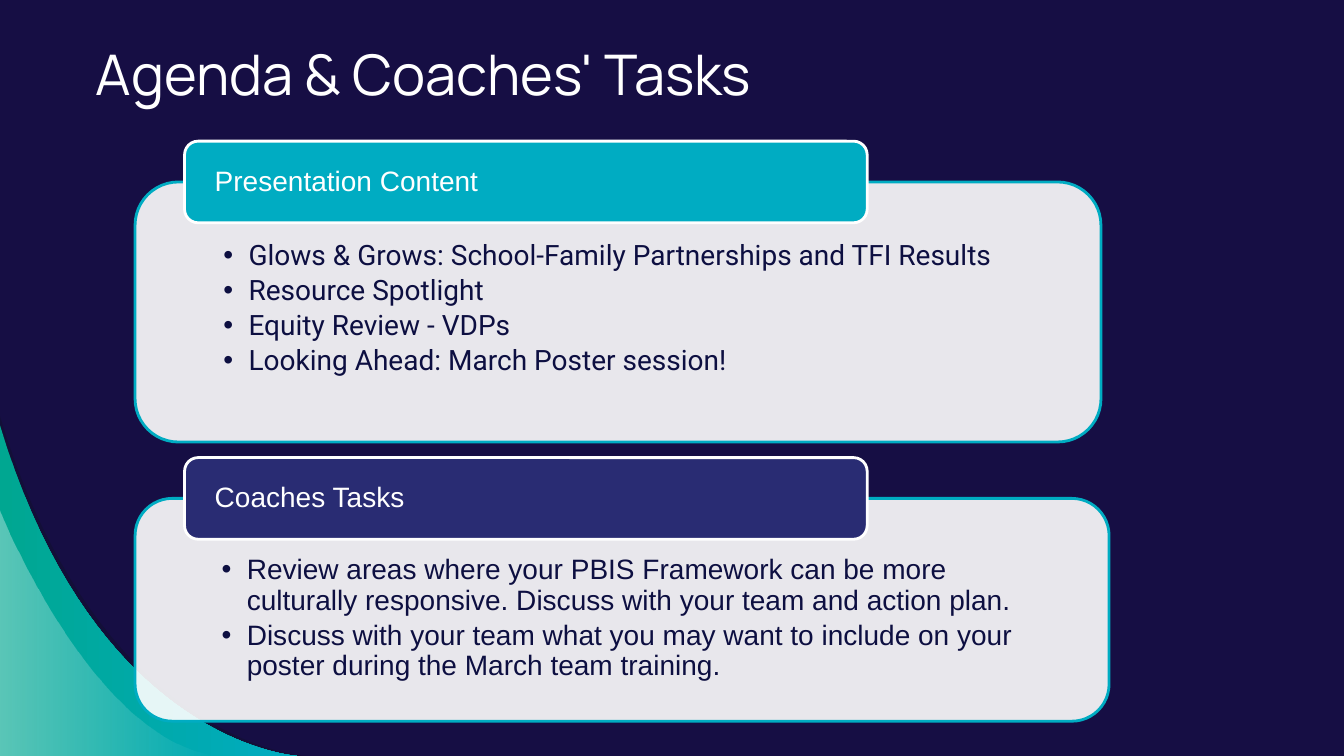
"""Build the agenda slide with its two titled panels."""
from lxml import etree
from pptx import Presentation
from pptx import util as u
from pptx.dml.color import RGBColor
from pptx.enum import shapes, text
from pptx.oxml.ns import qn

COLORS = {"night": "160E44", "shade": "12102F", "teal": "00ACC2", "green": "00A791",
          "indigo": "292C73", "white": "FFFFFF", "ink": "0D0F41"}
COLUMN, ROW = u.Inches(13.33) / 100, u.Inches(7.5) / 100
PANEL_LEFT, TAB_LEFT, TAB_WIDTH, TAB_HEIGHT = 10.05, 13.73, 50.79, 10.8
CURVE_STEPS = 40


def grid(left, top, width, height):
    """Turn hundredths of the slide into EMU lengths."""
    return [round(left * COLUMN), round(top * ROW), round(width * COLUMN), round(height * ROW)]


def rgb(name):
    """Look up a named colour."""
    return RGBColor.from_string(COLORS[name])


def set_attributes(target, values):
    """Apply a dict of format values to an object."""
    for name, value in values.items():
        setattr(target, name, value)


def set_opacity(color_element, percent):
    """Give a colour element an alpha value."""
    etree.SubElement(color_element, qn("a:alpha")).set("val", str(percent * 1000))


def fill_solid(shape, color, opacity=100):
    """Fill a shape with one colour."""
    shape.fill.solid()
    shape.fill.fore_color.rgb = rgb(color)
    if opacity < 100:
        set_opacity(shape._element.spPr.find(".//" + qn("a:srgbClr")), opacity)


def fill_gradient(shape, stops):
    """Fill a shape from left to right with (colour, opacity) stops."""
    shape.fill.gradient()
    shape.fill.gradient_angle = 0
    for stop, (color, opacity) in zip(shape.fill.gradient_stops, stops):
        stop.color.rgb = rgb(color)
    elements = shape._element.spPr.findall(".//" + qn("a:srgbClr"))
    for element, (color, opacity) in zip(elements, stops):
        set_opacity(element, opacity)


def add_swoosh(slide, start, control_one, control_two, end):
    """Add a corner area bounded by a cubic curve and the slide edges."""
    points = []
    for step in range(CURVE_STEPS + 1):
        t = step / CURVE_STEPS
        weights = ((1 - t) ** 3, 3 * t * (1 - t) ** 2, 3 * t * t * (1 - t), t ** 3)
        controls = (start, control_one, control_two, end)
        points.append(tuple(round(u.Inches(1) * sum(w * c[axis] for w, c in zip(weights, controls)))
                            for axis in (0, 1)))
    builder = slide.shapes.build_freeform(*points[0])
    builder.add_line_segments(points[1:] + [(0, u.Inches(7.5))], close=True)
    shape = builder.convert_to_shape()
    shape.shadow.inherit = False
    shape.line.fill.background()
    return shape


def write_text(shape, lines, font, insets, anchor, spacing=None, bullets=False):
    """Write paragraphs into a shape, bulleted when asked."""
    frame = shape.text_frame
    sides = ("margin_left", "margin_top", "margin_right", "margin_bottom")
    set_attributes(frame, {"word_wrap": True, "vertical_anchor": anchor,
                           **{side: u.Inches(inset) for side, inset in zip(sides, insets)}})
    frame.text = "\n".join(lines)
    for paragraph in frame.paragraphs:
        paragraph.alignment = text.PP_ALIGN.LEFT
        if spacing:
            paragraph.line_spacing = spacing
        if bullets:
            paragraph.space_after = u.Pt(3.5)
            properties = paragraph._p.get_or_add_pPr()
            properties.set("marL", str(u.Inches(0.25)))
            properties.set("indent", str(-u.Inches(0.25)))
            etree.SubElement(properties, qn("a:buFont")).set("typeface", "Arial")
            etree.SubElement(properties, qn("a:buChar")).set("char", "•")
        for run in paragraph.runs:
            name, size, color = font
            set_attributes(run.font, {"name": name, "size": u.Pt(size)})
            run.font.color.rgb = rgb(color)


def add_card(slide, box, fill, line, opacity=100):
    """Add a rounded rectangle with an outline."""
    shape = slide.shapes.add_shape(shapes.MSO_SHAPE.ROUNDED_RECTANGLE, *grid(*box))
    shape.shadow.inherit = False
    fill_solid(shape, fill, opacity)
    shape.line.color.rgb = rgb(line)
    shape.line.width = u.Pt(2)
    return shape


def add_section(slide, top, width, height, heading, tab_color, items, item_font):
    """Add a bulleted panel with a heading tab straddling its top edge."""
    panel = add_card(slide, (PANEL_LEFT, top + TAB_HEIGHT / 2, width, height), "white", "teal", 90)
    write_text(panel, items, (item_font, 20, "ink"), (0.75, 0.46, 0.75, 0.16),
               text.MSO_ANCHOR.TOP, 0.9, bullets=True)
    tab = add_card(slide, (TAB_LEFT, top, TAB_WIDTH, TAB_HEIGHT), tab_color, "white")
    write_text(tab, [heading], (("Arial"), 20, "white"), (0.26, 0, 0.26, 0),
               text.MSO_ANCHOR.MIDDLE, 0.9)


def add_title(slide, title):
    """Add the slide title."""
    box = slide.shapes.add_textbox(*grid(6.38, 3.47, 76.97, 12.27))
    write_text(box, [title], ("Manrope", 40, "white"), (0.1,) * 4, text.MSO_ANCHOR.MIDDLE)


def main():
    """Build and save the slide."""
    presentation = Presentation()
    set_attributes(presentation, {"slide_width": u.Inches(13.33), "slide_height": u.Inches(7.5)})
    slide = presentation.slides.add_slide(presentation.slide_layouts[6])
    fill_solid_background = slide.background.fill
    fill_solid_background.solid()
    fill_solid_background.fore_color.rgb = rgb("night")

    fill_solid(add_swoosh(slide, (0, 4.13), (0.98, 7.39), (3.03, 7.5), (3.03, 7.5)), "shade", 54)
    fill_gradient(add_swoosh(slide, (0, 4.22), (0.95, 7.39), (2.95, 7.5), (2.95, 7.5)),
                  [("green", 100), ("teal", 100)])
    fill_gradient(add_swoosh(slide, (0, 5.06), (0, 5.06), (0.91, 7.35), (2.16, 7.5)),
                  [("white", 36), ("white", 0)])

    add_title(slide, "Agenda & Coaches' Tasks")
    add_section(slide, 18.67, 71.87, 34.4, "Presentation Content", "teal", [
        "Glows & Grows: School-Family Partnerships and TFI Results",
        "Resource Spotlight",
        "Equity Review - VDPs",
        "Looking Ahead: March Poster session!"], "Roboto")
    add_section(slide, 60.53, 72.47, 29.47, "Coaches Tasks", "indigo", [
        "Review areas where your PBIS Framework can be more culturally responsive. "
        "Discuss with your team and action plan.",
        "Discuss with your team what you may want to include on your poster "
        "during the March team training."], "Arial")
    presentation.save("out.pptx")


if __name__ == "__main__":
    main()
